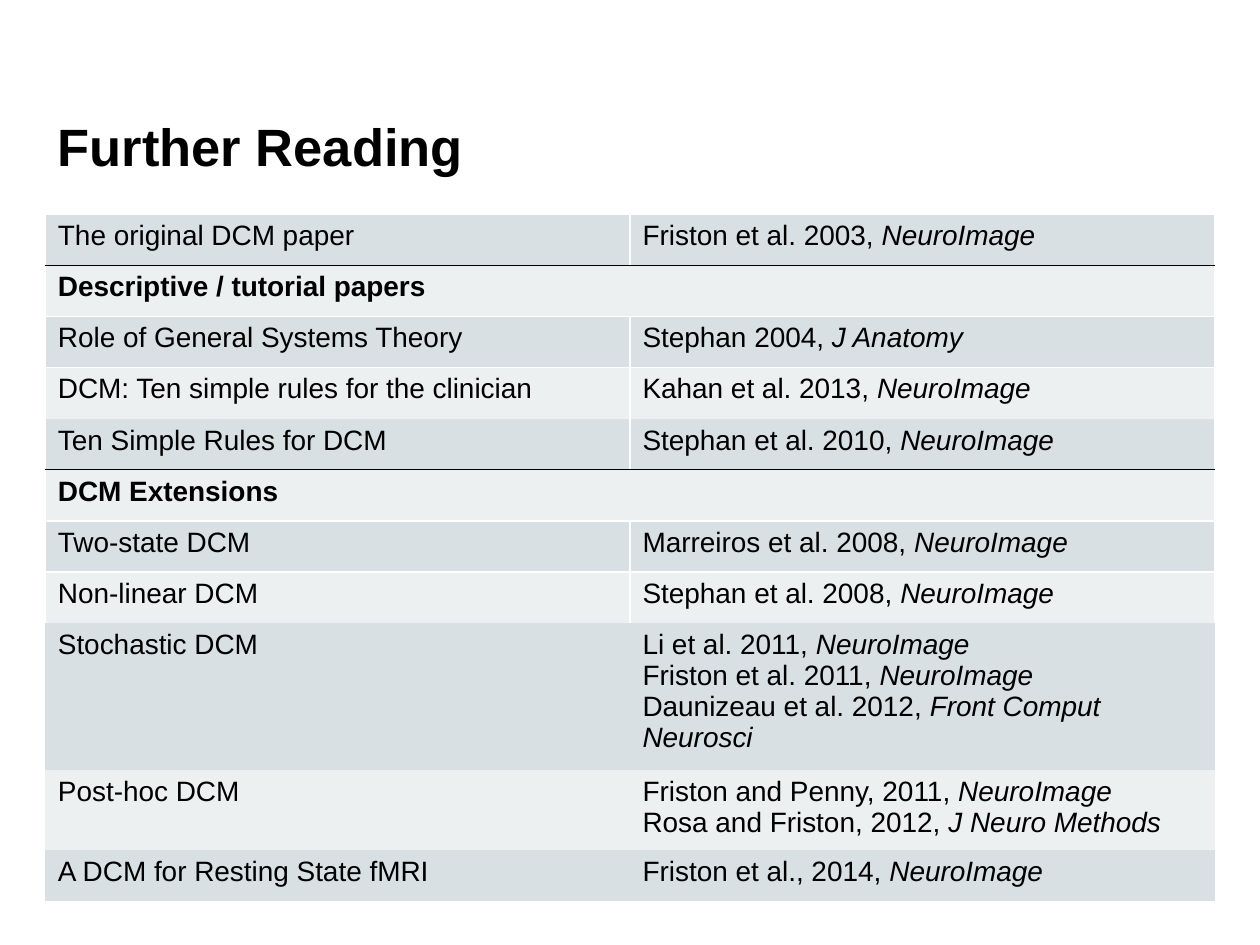
from pptx import Presentation
from pptx.dml.color import RGBColor
from pptx.enum.text import MSO_ANCHOR
from pptx.oxml.ns import qn
from pptx.util import Inches, Pt
from lxml.etree import SubElement

TITLE = "Further Reading"
READING = [
    ("The original DCM paper", [("Friston et al. 2003, ", "NeuroImage")]),
    ("Descriptive / tutorial papers", []),
    ("Role of General Systems Theory", [("Stephan 2004, ", "J Anatomy")]),
    ("DCM: Ten simple rules for the clinician", [("Kahan et al. 2013, ", "NeuroImage")]),
    ("Ten Simple Rules for DCM", [("Stephan et al. 2010, ", "NeuroImage")]),
    ("DCM Extensions", []),
    ("Two-state DCM", [("Marreiros et al. 2008, ", "NeuroImage")]),
    ("Non-linear DCM", [("Stephan et al. 2008, ", "NeuroImage")]),
    ("Stochastic DCM", [
        ("Li et al. 2011, ", "NeuroImage"),
        ("Friston et al. 2011, ", "NeuroImage"),
        ("Daunizeau et al. 2012, ", "Front Comput Neurosci"),
    ]),
    ("Post-hoc DCM", [
        ("Friston and Penny, 2011, ", "NeuroImage"),
        ("Rosa and Friston, 2012, ", "J Neuro Methods"),
    ]),
    ("A DCM for Resting State fMRI", [("Friston et al., 2014, ", "NeuroImage")]),
]
COLORS = {"text": "000000", "white": "FFFFFF", "dark": "D8E0E3", "light": "ECF0F1"}
RULES = {0: "white", 1: "text", 2: "white", 3: "white", 5: "text", 6: "white", 7: "white"}
RULED_ROWS = 8
LEFT, WIDTH = Inches(0.36), Inches(9.28)
ROW_H = Pt(29.2)


def add_run(p, text, size, bold=False, italic=False):
    r = p.add_run()
    r.text = text
    r.font.name = "Arial"
    r.font.size = Pt(size)
    r.font.bold = bold
    r.font.italic = italic
    r.font.color.rgb = RGBColor.from_string(COLORS["text"])


def set_borders(cell, row):
    side = "white" if row < RULED_ROWS else None
    edges = {"lnL": side, "lnR": side, "lnT": RULES.get(row), "lnB": RULES.get(row + 1)}
    tcPr = cell._tc.get_or_add_tcPr()
    for tag, color in edges.items():
        ln = SubElement(tcPr, qn(f"a:{tag}"), w=str(Pt(1)))
        if color:
            fill = SubElement(ln, qn("a:solidFill"))
            SubElement(fill, qn("a:srgbClr"), val=COLORS[color])
        else:
            SubElement(ln, qn("a:noFill"))


prs = Presentation()
prs.slide_width, prs.slide_height = Inches(10), Inches(7.5)
s = prs.slides.add_slide(prs.slide_layouts[6])

tf = s.shapes.add_textbox(LEFT, Inches(0.84), WIDTH, Inches(0.63)).text_frame
tf.word_wrap = True
tf.vertical_anchor = MSO_ANCHOR.MIDDLE
add_run(tf.paragraphs[0], TITLE, 30, bold=True)

table = s.shapes.add_table(len(READING), 2, LEFT, Inches(1.7), WIDTH,
                           ROW_H * len(READING)).table
table.first_row = table.horz_banding = False

for i, (topic, papers) in enumerate(READING):
    table.rows[i].height = ROW_H
    topic_cell, paper_cell = table.cell(i, 0), table.cell(i, 1)
    if not papers:
        topic_cell.merge(paper_cell)
    add_run(topic_cell.text_frame.paragraphs[0], topic, 16, bold=not papers)
    tf = paper_cell.text_frame
    for j, (authors, journal) in enumerate(papers):
        p = tf.add_paragraph() if j else tf.paragraphs[0]
        add_run(p, authors, 16)
        add_run(p, journal, 16, italic=True)
    for cell in (topic_cell, paper_cell):
        set_borders(cell, i)
        cell.fill.solid()
        cell.fill.fore_color.rgb = RGBColor.from_string(COLORS["light" if i % 2 else "dark"])

prs.save("out.pptx")
